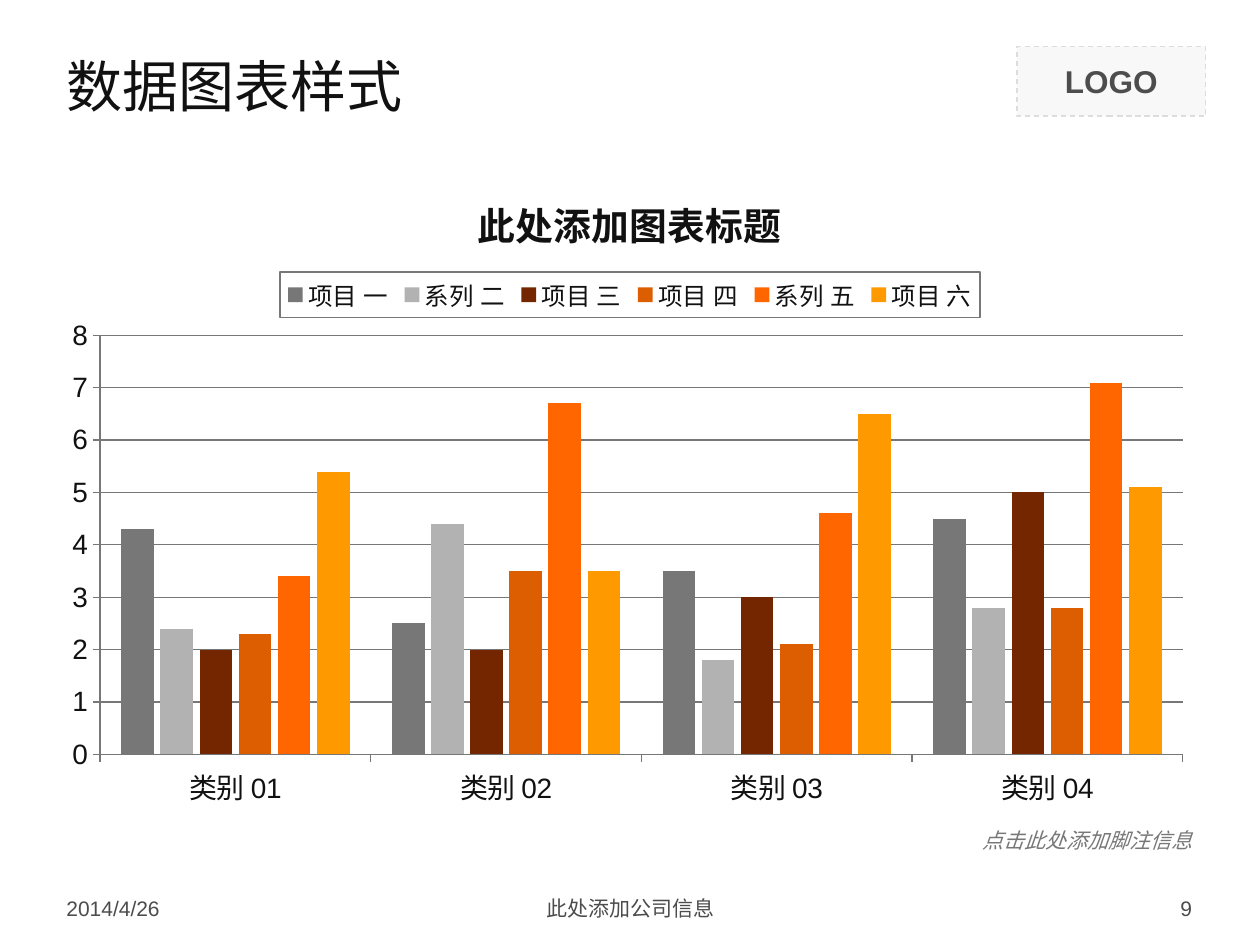
from lxml.etree import fromstring
from pptx import Presentation
from pptx.chart.data import CategoryChartData
from pptx.dml.color import RGBColor
from pptx.enum.chart import XL_CHART_TYPE, XL_LEGEND_POSITION, XL_TICK_MARK
from pptx.enum.dml import MSO_LINE
from pptx.enum.shapes import MSO_SHAPE
from pptx.enum.text import MSO_ANCHOR, MSO_AUTO_SIZE, PP_ALIGN
from pptx.util import Cm, Pt

INK, GREY, FOOTER = "111111", "777777", "4C4C4C"
LEFT, WIDTH = 1.09, 23.22
FOOTER_TOP, FOOTER_HEIGHT = 17.93, 0.74
CHART_NS = "http://schemas.openxmlformats.org/drawingml/2006/chart"
DRAW_NS = "http://schemas.openxmlformats.org/drawingml/2006/main"
CATEGORIES = ["类别 01", "类别 02", "类别 03", "类别 04"]
SERIES = [
    ("项目 一", "777777", (4.3, 2.5, 3.5, 4.5)),
    ("系列 二", "B2B2B2", (2.4, 4.4, 1.8, 2.8)),
    ("项目 三", "742600", (2, 2, 3, 5)),
    ("项目 四", "DC5E01", (2.3, 3.5, 2.1, 2.8)),
    ("系列 五", "FF6600", (3.4, 6.7, 4.6, 7.1)),
    ("项目 六", "FF9900", (5.4, 3.5, 6.5, 5.1)),
]


def rgb(value):
    """Turn a hex string into a colour."""
    return RGBColor.from_string(value)


def style_font(font, size, color, name="Arial", bold=False, italic=False):
    """Set the look of a font."""
    font.size, font.name = Pt(size), name
    font.bold, font.italic = bold, italic
    font.color.rgb = rgb(color)


def style_line(line, color=GREY):
    """Give a line its colour and a thin width."""
    line.color.rgb = rgb(color)
    line.width = Pt(0.75)


def write(sp, text, size, color, align=PP_ALIGN.LEFT, **look):
    """Write one vertically centred run into a shape."""
    tf = sp.text_frame
    tf.word_wrap = True
    tf.vertical_anchor = MSO_ANCHOR.MIDDLE
    p = tf.paragraphs[0]
    p.alignment = align
    r = p.add_run()
    r.text = text
    style_font(r.font, size, color, **look)


def add_text(s, box, text, size, color, align=PP_ALIGN.LEFT, **look):
    """Add a text box and return it."""
    sp = s.shapes.add_textbox(*map(Cm, box))
    write(sp, text, size, color, align, **look)
    return sp


def add_logo_box(s):
    """Add the dashed box that reserves room for a logo."""
    sp = s.shapes.add_shape(MSO_SHAPE.RECTANGLE, Cm(20.5), Cm(0.94), Cm(3.81), Cm(1.4))
    sp.shadow.inherit = False
    sp.fill.solid()
    sp.fill.fore_color.rgb = rgb("F8F8F8")
    style_line(sp.line, "DDDDDD")
    sp.line.dash_style = MSO_LINE.DASH
    write(sp, "LOGO", 18, "4D4D4D", PP_ALIGN.CENTER, bold=True)


def add_footnote(s):
    """Add the unwrapped footnote under the chart."""
    sp = add_text(s, (19.51, 16.56, 4.78, 0.76), "点击此处添加脚注信息", 12, GREY,
                  PP_ALIGN.RIGHT, italic=True)
    tf = sp.text_frame
    tf.word_wrap = False
    tf.auto_size = MSO_AUTO_SIZE.SHAPE_TO_FIT_TEXT
    tf.vertical_anchor = MSO_ANCHOR.TOP


def style_axis(axis):
    """Set the line, ticks and labels of an axis."""
    axis.major_tick_mark = XL_TICK_MARK.OUTSIDE
    style_line(axis.format.line)
    style_font(axis.tick_labels.font, 16, INK)


def add_legend(chart):
    """Add a framed legend above the plot."""
    chart.has_legend = True
    legend = chart.legend
    legend.position = XL_LEGEND_POSITION.TOP
    legend.include_in_layout = False
    style_font(legend.font, 14, INK)
    frame = fromstring(
        f'<c:spPr xmlns:c="{CHART_NS}" xmlns:a="{DRAW_NS}"><a:ln w="9525"><a:solidFill>'
        f'<a:srgbClr val="{GREY}"/></a:solidFill></a:ln></c:spPr>')
    legend._element.find(f"{{{CHART_NS}}}txPr").addprevious(frame)


def place_plot(chart, x, y, w, h):
    """Fix the inner plot area as fractions of the chart."""
    area = chart._chartSpace.chart.plotArea
    for old in area.findall(f"{{{CHART_NS}}}layout"):
        area.remove(old)
    sizes = "".join(f'<c:{k} val="{v}"/>' for k, v in zip("xywh", (x, y, w, h)))
    area.insert(0, fromstring(
        f'<c:layout xmlns:c="{CHART_NS}"><c:manualLayout><c:layoutTarget val="inner"/>'
        f'<c:xMode val="edge"/><c:yMode val="edge"/>{sizes}</c:manualLayout></c:layout>'))


def add_column_chart(s):
    """Add the clustered column chart."""
    data = CategoryChartData()
    data.categories = CATEGORIES
    for name, _, values in SERIES:
        data.add_series(name, values)
    chart = s.shapes.add_chart(XL_CHART_TYPE.COLUMN_CLUSTERED, Cm(LEFT), Cm(3.33),
                               Cm(WIDTH), Cm(13.2), data).chart
    style_font(chart.font, 18, INK)
    chart.has_title = True
    r = chart.chart_title.text_frame.paragraphs[0].add_run()
    r.text = "此处添加图表标题"
    style_font(r.font, 21.6, INK, bold=True)
    add_legend(chart)
    place_plot(chart, 0.04, 0.26, 0.94, 0.64)
    style_axis(chart.category_axis)
    axis = chart.value_axis
    style_axis(axis)
    axis.minimum_scale, axis.maximum_scale, axis.major_unit = 0, 8, 1
    style_line(axis.major_gridlines.format.line)
    plot = chart.plots[0]
    plot.gap_width, plot.overlap, plot.vary_by_categories = 130, -20, False
    for series, (_, color, _) in zip(plot.series, SERIES):
        series.format.fill.solid()
        series.format.fill.fore_color.rgb = rgb(color)


def main():
    """Build the slide and save it."""
    prs = Presentation()
    prs.slide_width, prs.slide_height = Cm(25.4), Cm(19.05)
    s = prs.slides.add_slide(prs.slide_layouts[6])
    add_logo_box(s)
    add_text(s, (LEFT, 0.71, WIDTH, 2.01), "数据图表样式", 32, INK, name="Montserrat")
    add_column_chart(s)
    for left, width, text, align in (
        (LEFT, 5.92, "2014/4/26", PP_ALIGN.LEFT),
        (8.69, 8.05, "此处添加公司信息", PP_ALIGN.CENTER),
        (18.36, 5.92, "9", PP_ALIGN.RIGHT),
    ):
        add_text(s, (left, FOOTER_TOP, width, FOOTER_HEIGHT), text, 12, FOOTER, align)
    add_footnote(s)
    prs.save("out.pptx")


if __name__ == "__main__":
    main()
